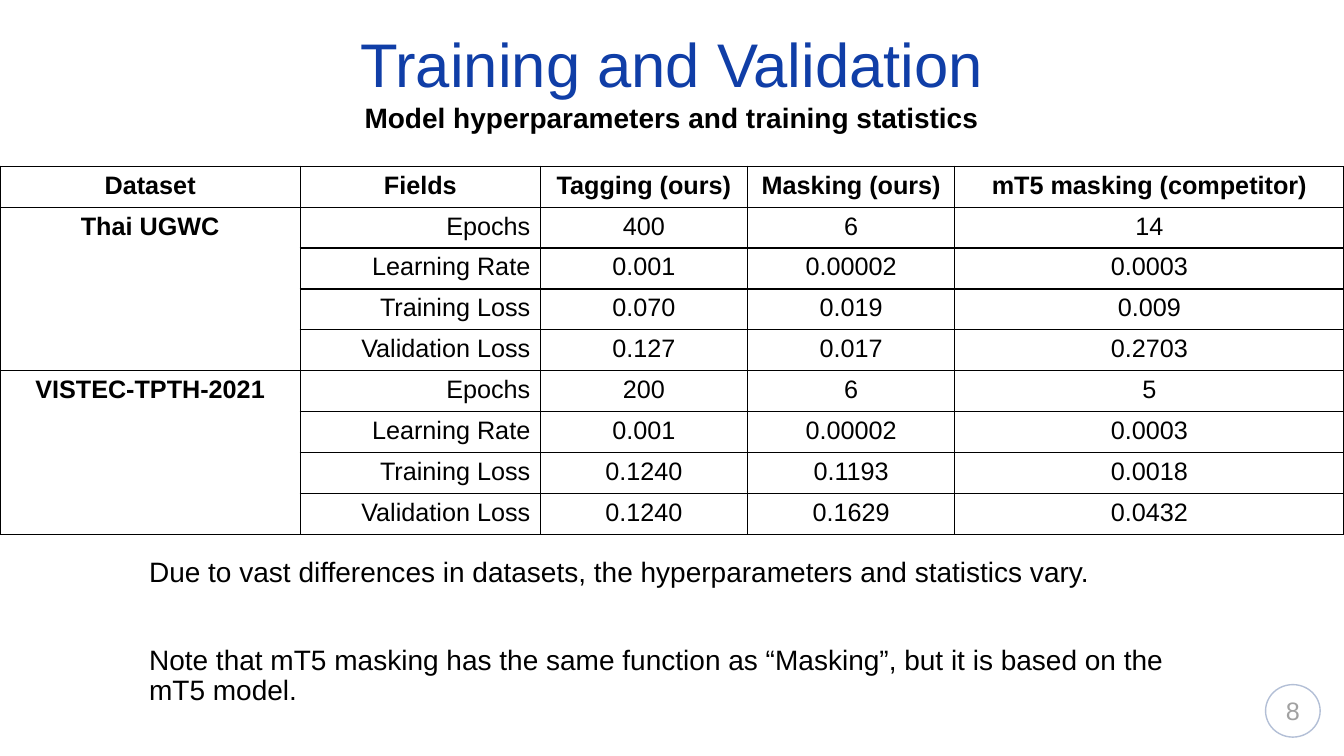
from dataclasses import dataclass

from pptx import Presentation
from pptx.dml.color import RGBColor
from pptx.enum import shapes, text
from pptx.oxml import parse_xml
from pptx.oxml.ns import nsdecls, qn
from pptx.util import Pt

BLACK, WHITE, BLUE, RING = "000000", "FFFFFF", "103EA7", "325491"
CENTER, LEFT, RIGHT = text.PP_ALIGN.CENTER, text.PP_ALIGN.LEFT, text.PP_ALIGN.RIGHT
TOP, MIDDLE = text.MSO_ANCHOR.TOP, text.MSO_ANCHOR.MIDDLE


@dataclass
class Box:
    left: float
    top: float
    width: float
    height: float

    def lengths(self) -> tuple:
        return Pt(self.left), Pt(self.top), Pt(self.width), Pt(self.height)


@dataclass
class Style:
    size: float
    color: str = BLACK
    bold: bool = False
    align: text.PP_ALIGN = CENTER
    line_spacing: float = 1.0
    gap: float = 0


@dataclass
class Dataset:
    name: str
    results: list


HEADERS = ["Dataset", "Fields", "Tagging (ours)", "Masking (ours)", "mT5 masking (competitor)"]
FIELDS = ["Epochs", "Learning Rate", "Training Loss", "Validation Loss"]
DATASETS = [
    Dataset("Thai UGWC", [
        ["400", "6", "14"],
        ["0.001", "0.00002", "0.0003"],
        ["0.070", "0.019", "0.009"],
        ["0.127", "0.017", "0.2703"],
    ]),
    Dataset("VISTEC-TPTH-2021", [
        ["200", "6", "5"],
        ["0.001", "0.00002", "0.0003"],
        ["0.1240", "0.1193", "0.0018"],
        ["0.1240", "0.1629", "0.0432"],
    ]),
]
COLUMN_WIDTHS = [214.5, 171.5, 148, 148, 278]
ROW_HEIGHT = 29.2
HEADING = Style(18, bold=True)
FIELD = Style(18, align=RIGHT)
VALUE = Style(18)


def rgb(color: str) -> RGBColor:
    return RGBColor.from_string(color)


def write(frame, lines: list, style: Style, anchor=TOP) -> None:
    frame.word_wrap = True
    frame.vertical_anchor = anchor
    for index, line in enumerate(lines):
        paragraph = frame.add_paragraph() if index else frame.paragraphs[0]
        paragraph.text = line
        paragraph.alignment = style.align
        paragraph.line_spacing = style.line_spacing
        paragraph.space_before = Pt(style.gap if index else 0)
        font = paragraph.font
        font.name, font.size, font.bold = "Arial", Pt(style.size), style.bold
        font.color.rgb = rgb(color=style.color)


def add_text(slide, box: Box, lines: list, style: Style) -> None:
    write(slide.shapes.add_textbox(*box.lengths()).text_frame, lines, style)


def add_white_shape(slide, kind: shapes.MSO_SHAPE, box: Box):
    shape = slide.shapes.add_shape(kind, *box.lengths())
    shape.shadow.inherit = False
    shape.fill.solid()
    shape.fill.fore_color.rgb = rgb(WHITE)
    return shape


def fill_cell(cell, label: str, style: Style) -> None:
    properties = cell._tc.get_or_add_tcPr()
    for side in ("lnL", "lnR", "lnT", "lnB"):
        properties.append(parse_xml(
            f'<a:{side} {nsdecls("a")} w="{Pt(1)}"><a:solidFill>'
            f'<a:srgbClr val="{BLACK}"/></a:solidFill></a:{side}>'))
    cell.fill.solid()
    cell.fill.fore_color.rgb = rgb(WHITE)
    write(cell.text_frame, [label], style)


def add_statistics(slide, left: float, top: float) -> None:
    block = len(FIELDS)
    row_count = 1 + block * len(DATASETS)
    box = Box(left, top, sum(COLUMN_WIDTHS), ROW_HEIGHT * row_count)
    table = slide.shapes.add_table(row_count, len(HEADERS), *box.lengths()).table
    table.first_row = table.horz_banding = False
    for column, width in zip(table.columns, COLUMN_WIDTHS):
        column.width = Pt(width)
    for row in table.rows:
        row.height = Pt(ROW_HEIGHT)

    for column, header in enumerate(HEADERS):
        fill_cell(table.cell(0, column), header, HEADING)
    for number, dataset in enumerate(DATASETS):
        first = 1 + number * block
        for offset, (field, values) in enumerate(zip(FIELDS, dataset.results)):
            row = first + offset
            fill_cell(table.cell(row, 0), "" if offset else dataset.name, HEADING)
            fill_cell(table.cell(row, 1), field, FIELD)
            for column, value in enumerate(values, start=2):
                fill_cell(table.cell(row, column), value, VALUE)
        table.cell(first, 0).merge(table.cell(first + block - 1, 0))


def main() -> None:
    presentation = Presentation()
    presentation.slide_width, presentation.slide_height = Pt(960), Pt(540)
    slide = presentation.slides.add_slide(presentation.slide_layouts.get_by_name("Title Only"))

    # Page number under a translucent white veil
    badge = add_white_shape(slide, shapes.MSO_SHAPE.OVAL, Box(904, 489, 39, 37.5))
    badge.line.color.rgb = rgb(RING)
    badge.line.width = Pt(1)
    write(badge.text_frame, ["8"], Style(18), MIDDLE)
    veil = add_white_shape(slide, shapes.MSO_SHAPE.ROUND_1_RECTANGLE, Box(0, 0, 960, 540))
    veil.adjustments[0] = 0
    veil.line.fill.background()
    veil_color = veil._element.spPr.find(qn("a:solidFill"))[0]
    veil_color.append(parse_xml(f'<a:alpha {nsdecls("a")} val="63000"/>'))

    # Title, raised above the veil
    title = slide.shapes.title
    title.left, title.top, title.width, title.height = Box(66, 0, 828, 96).lengths()
    title.text_frame.auto_size = text.MSO_AUTO_SIZE.NONE
    write(title.text_frame, ["Training and Validation"],
          Style(44, BLUE, line_spacing=0.9), MIDDLE)
    title._element.getparent().append(title._element)

    # Table, remarks and subtitle
    add_statistics(slide, 0, 118.8)
    add_text(slide, Box(99.4, 395.3, 762, 143), [
        "Due to vast differences in datasets, the hyperparameters and statistics vary.",
        "Note that mT5 masking has the same function as “Masking”, "
        "but it is based on the mT5 model.",
    ], Style(20, align=LEFT, line_spacing=0.9, gap=41))
    add_text(slide, Box(213, 71.3, 533.5, 39.6),
             ["Model hyperparameters and training statistics"],
             Style(20, bold=True, line_spacing=0.9))

    presentation.save("out.pptx")


if __name__ == "__main__":
    main()
